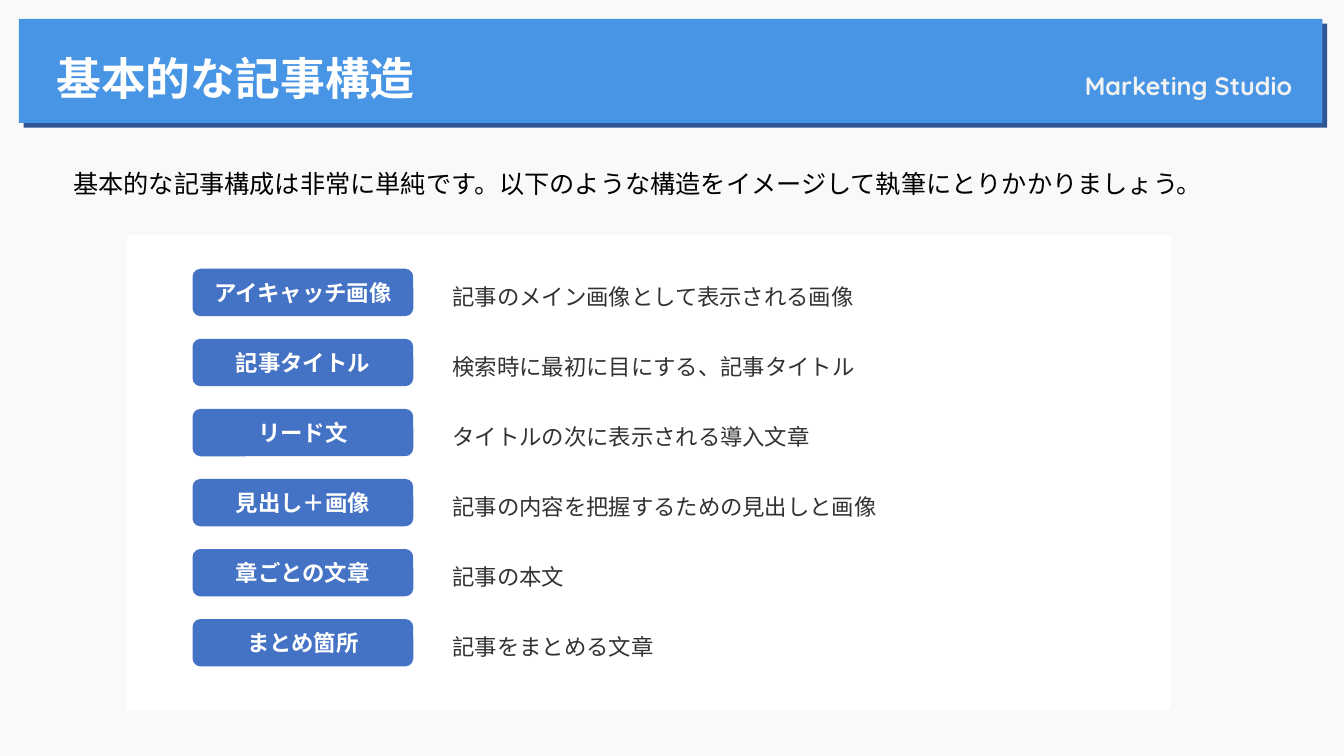
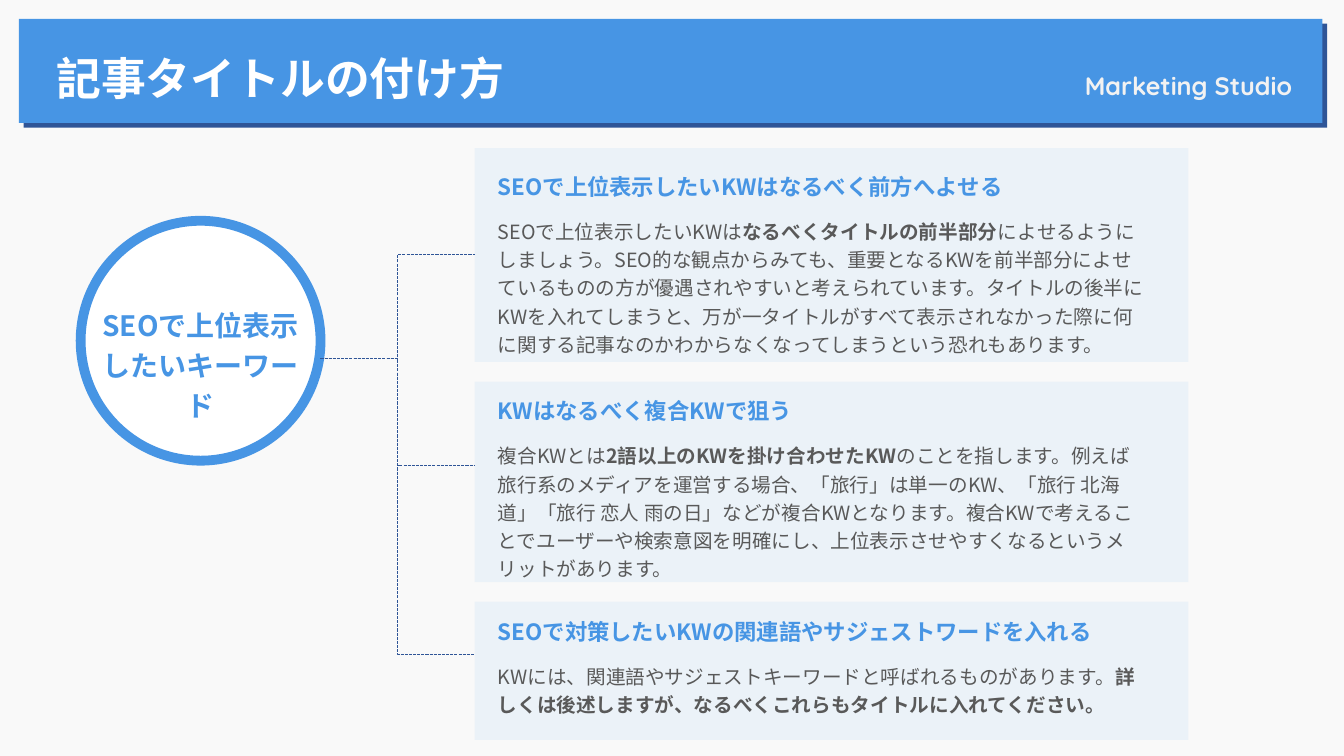
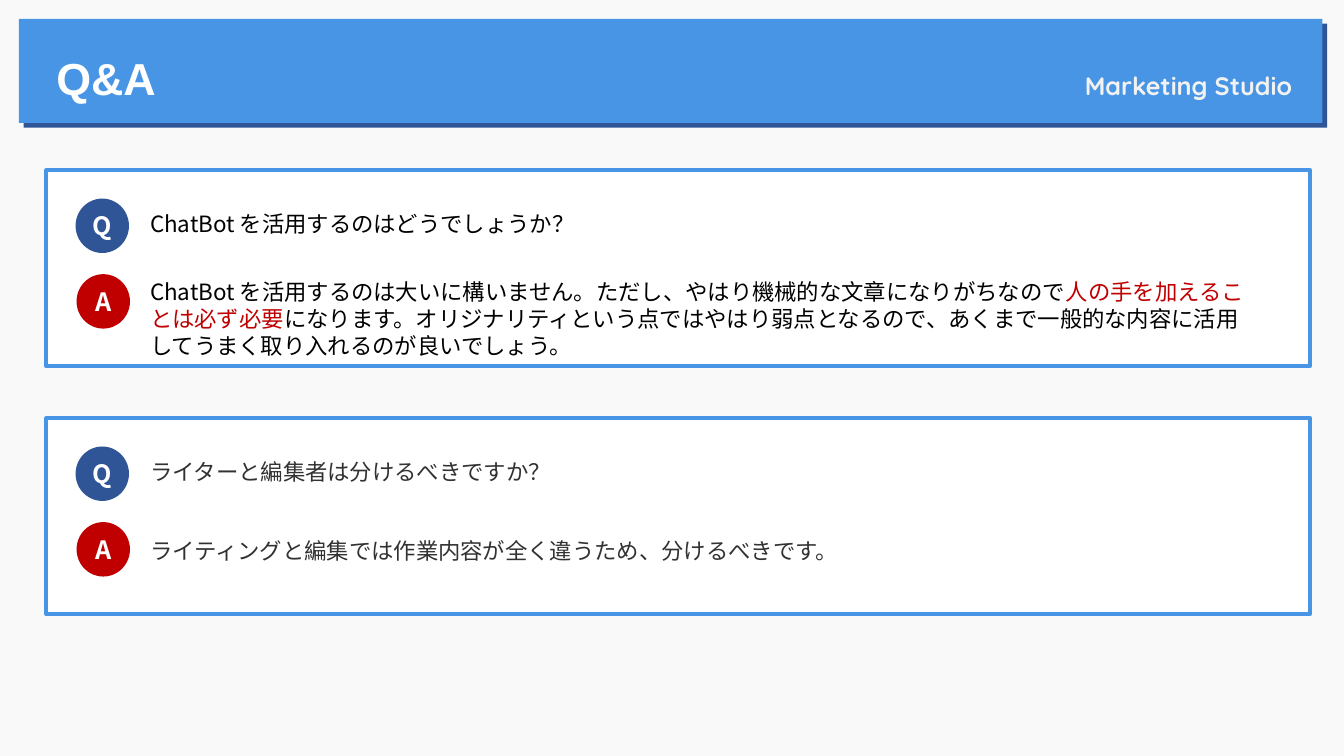
from lxml.etree import SubElement
from pptx import Presentation
from pptx.dml.color import RGBColor
from pptx.enum.dml import MSO_LINE
from pptx.enum.shapes import MSO_CONNECTOR, MSO_SHAPE
from pptx.enum.text import MSO_ANCHOR, PP_ALIGN
from pptx.oxml.ns import qn
from pptx.util import Inches, Pt

PAPER = RGBColor(0xF9, 0xF9, 0xF9)
WHITE = RGBColor(0xFF, 0xFF, 0xFF)
BLACK = RGBColor(0x00, 0x00, 0x00)
INK = RGBColor(0x32, 0x32, 0x32)
GRAY = RGBColor(0x59, 0x59, 0x59)
SILVER = RGBColor(0xF2, 0xF2, 0xF2)
SKY = RGBColor(0x47, 0x95, 0xE4)
BLUE = RGBColor(0x44, 0x72, 0xC4)
NAVY = RGBColor(0x2F, 0x55, 0x97)
PALE = RGBColor(0xEB, 0xF2, 0xF8)
RED = RGBColor(0xC0, 0x00, 0x00)

COLS, ROWS = 80, 45
CELL = Inches(1) / 6
FONT = "Noto Sans CJK JP"


class Deck:
    """Slides on an 80 by 45 grid that share one header and one text style."""

    def __init__(self):
        self.prs = Presentation()
        self.prs.slide_width, self.prs.slide_height = self.grid(COLS, ROWS)
        self.s = None

    def grid(self, *lengths):
        return [round(n * CELL) for n in lengths]

    def slide(self, title):
        self.s = self.prs.slides.add_slide(self.prs.slide_layouts[6])
        fill = self.s.background.fill
        fill.solid()
        fill.fore_color.rgb = PAPER
        for offset, color in ((1.4, NAVY), (1.12, SKY)):
            self.shape((offset, offset, 77.6, 6.2), color)
        self.text((47.2, 2.1, 30.3, 4.2), "Marketing Studio", 18, SILVER, bold=True,
                  font="Quicksand", align=PP_ALIGN.RIGHT, anchor=MSO_ANCHOR.BOTTOM, spacing=0.9)
        self.text((2.76, 2.7, 49, 3.84), title, 32, WHITE, bold=True, font="Arial")

    def shape(self, box, color, kind=MSO_SHAPE.RECTANGLE, border=0):
        sp = self.s.shapes.add_shape(kind, *self.grid(*box))
        sp.shadow.inherit = False
        sp.fill.solid()
        sp.fill.fore_color.rgb = color
        if border:
            sp.line.color.rgb = SKY
            sp.line.width = Pt(border)
        else:
            sp.line.fill.background()
        return sp

    def text(self, box, parts, size, color, **style):
        sp = self.s.shapes.add_textbox(*self.grid(*box))
        sp.text_frame.word_wrap = True
        self.set_text(sp.text_frame, parts, size, color, **style)

    def label(self, box, text, size, color, kind):
        tf = self.shape(box, color, kind).text_frame
        tf.word_wrap = False
        self.set_text(tf, text, size, WHITE, bold=True, align=PP_ALIGN.CENTER,
                      anchor=MSO_ANCHOR.MIDDLE, inset=False)

    def set_text(self, tf, parts, size, color, bold=None, font=FONT, align=PP_ALIGN.LEFT,
                 anchor=MSO_ANCHOR.TOP, spacing=None, inset=True, accent=None):
        tf.vertical_anchor = anchor
        if not inset:
            tf.margin_left = tf.margin_top = tf.margin_right = tf.margin_bottom = 0
        p = tf.paragraphs[0]
        p.alignment = align
        p.line_spacing = spacing
        p.font.size = Pt(size)
        p.font.bold = bold
        p.font.color.rgb = color
        p.font.name = font
        latin = next(p._p.iter(qn("a:latin")))
        east = SubElement(latin.getparent(), qn("a:ea"))
        east.set("typeface", FONT)
        latin.addnext(east)
        for i, part in enumerate([parts] if isinstance(parts, str) else parts):
            r = p.add_run()
            r.text = part
            if i % 2 and accent:
                r.font.color.rgb = accent
            elif i % 2:
                r.font.bold = True

    def elbow(self, start, end):
        cx = self.s.shapes.add_connector(MSO_CONNECTOR.ELBOW, *self.grid(*start, *end))
        cx.line.color.rgb = NAVY
        cx.line.width = Pt(0.75)
        cx.line.dash_style = MSO_LINE.SQUARE_DOT
        SubElement(cx._element.spPr, qn("a:effectLst"))


def structure(deck):
    deck.slide("基本的な記事構造")
    deck.text((3.78, 9.72, 67.7, 2.4),
              "基本的な記事構成は非常に単純です。以下のような構造をイメージして執筆にとりかかりましょう。",
              18, BLACK)
    deck.shape((7.56, 14, 62.16, 28.26), WHITE)
    parts = [
        ("アイキャッチ画像", "記事のメイン画像として表示される画像"),
        ("記事タイトル", "検索時に最初に目にする、記事タイトル"),
        ("リード文", "タイトルの次に表示される導入文章"),
        ("見出し＋画像", "記事の内容を把握するための見出しと画像"),
        ("章ごとの文章", "記事の本文"),
        ("まとめ箇所", "記事をまとめる文章"),
    ]
    for i, (name, meaning) in enumerate(parts):
        top = 16 + 4.17 * i
        deck.label((11.46, top, 13.14, 2.82), name, 16, BLUE, MSO_SHAPE.ROUNDED_RECTANGLE)
        deck.text((26.94, top + 0.54, 45.5, 1.74), meaning, 16, INK, spacing=1.2, inset=False)


def titles(deck):
    deck.slide("記事タイトルの付け方")
    deck.shape((4.8, 13.14, 14.28, 14.28), WHITE, MSO_SHAPE.OVAL, border=7)
    deck.text((5.1, 17.64, 13.68, 5.16), "SEOで上位表示したいキーワード", 20, SKY,
              bold=True, align=PP_ALIGN.CENTER, spacing=1.2)
    tips = [
        (12.72, 1.2, 15.18, "SEOで上位表示したいKWはなるべく前方へよせる",
         ["SEOで上位表示したいKWは", "なるべくタイトルの前半部分",
          "によせるようにしましょう。SEO的な観点からみても、重要となるKWを前半部分によせているものの方が"
          "優遇されやすいと考えられています。タイトルの後半にKWを入れてしまうと、万が一タイトルがすべて"
          "表示されなかった際に何に関する記事なのかわからなくなってしまうという恐れもあります。"]),
        (11.94, 0.66, 27.72, "KWはなるべく複合KWで狙う",
         ["複合KWとは", "2語以上のKWを掛け合わせたKW",
          "のことを指します。例えば旅行系のメディアを運営する場合、「旅行」は単一のKW、"
          "「旅行 北海道」「旅行 恋人 雨の日」などが複合KWとなります。複合KWで考えることで"
          "ユーザーや検索意図を明確にし、上位表示させやすくなるというメリットがあります。"]),
        (8.22, 0.66, 38.94, "SEOで対策したいKWの関連語やサジェストワードを入れる",
         ["KWには、関連語やサジェストキーワードと呼ばれるものがあります。",
          "詳しくは後述しますが、なるべくこれらもタイトルに入れてください。"]),
    ]
    top = 8.82
    for height, pad, joint, heading, body in tips:
        deck.shape((28.26, top, 42.48, height), PALE)
        deck.text((29.04, top + pad, 40, 2.22), heading, 16, SKY, bold=True)
        deck.text((29.04, top + pad + 2.5, 40, height - pad - 2.5), body, 14, GRAY, spacing=1.2)
        deck.elbow((19.08, 21.36), (28.26, joint))
        top += height + 1.17


def questions(deck):
    deck.slide("Q&A")
    pairs = [
        (10.14, 6.12, BLACK, "ChatBot を活用するのはどうでしょうか？",
         ["ChatBot を活用するのは大いに構いません。ただし、やはり機械的な文章になりがちなので",
          "人の手を加えることは必ず必要",
          "になります。オリジナリティという点ではやはり弱点となるので、"
          "あくまで一般的な内容に活用してうまく取り入れるのが良いでしょう。"]),
        (24.9, 6.78, INK, "ライターと編集者は分けるべきですか？",
         "ライティングと編集では作業内容が全く違うため、分けるべきです。"),
    ]
    for top, answer_row, color, question, answer in pairs:
        deck.shape((2.76, top, 75.24, 11.64), WHITE, border=3)
        deck.label((4.5, top + 1.68, 3.18, 3.24), "Q", 18, NAVY, MSO_SHAPE.OVAL)
        deck.label((4.56, top + 6.18, 3.18, 3.24), "A", 18, RED, MSO_SHAPE.OVAL)
        deck.text((8.34, top + 2.1, 40, 2.22), question, 16, color)
        deck.text((8.34, top + answer_row, 66.9, 3.84), answer, 16, color, accent=RED)


def main():
    deck = Deck()
    for build in (structure, titles, questions):
        build(deck)
    deck.prs.save("out.pptx")


if __name__ == "__main__":
    main()
